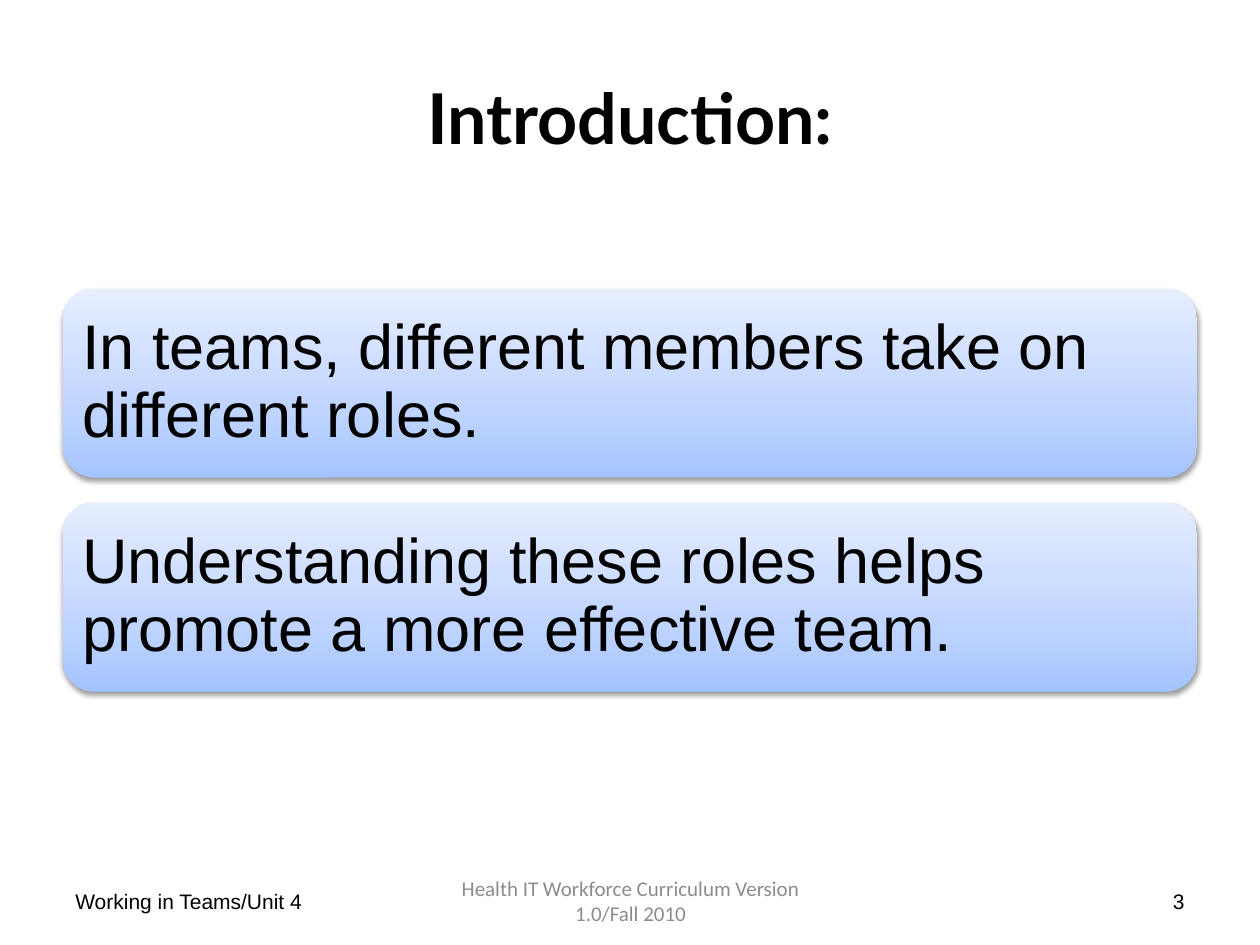
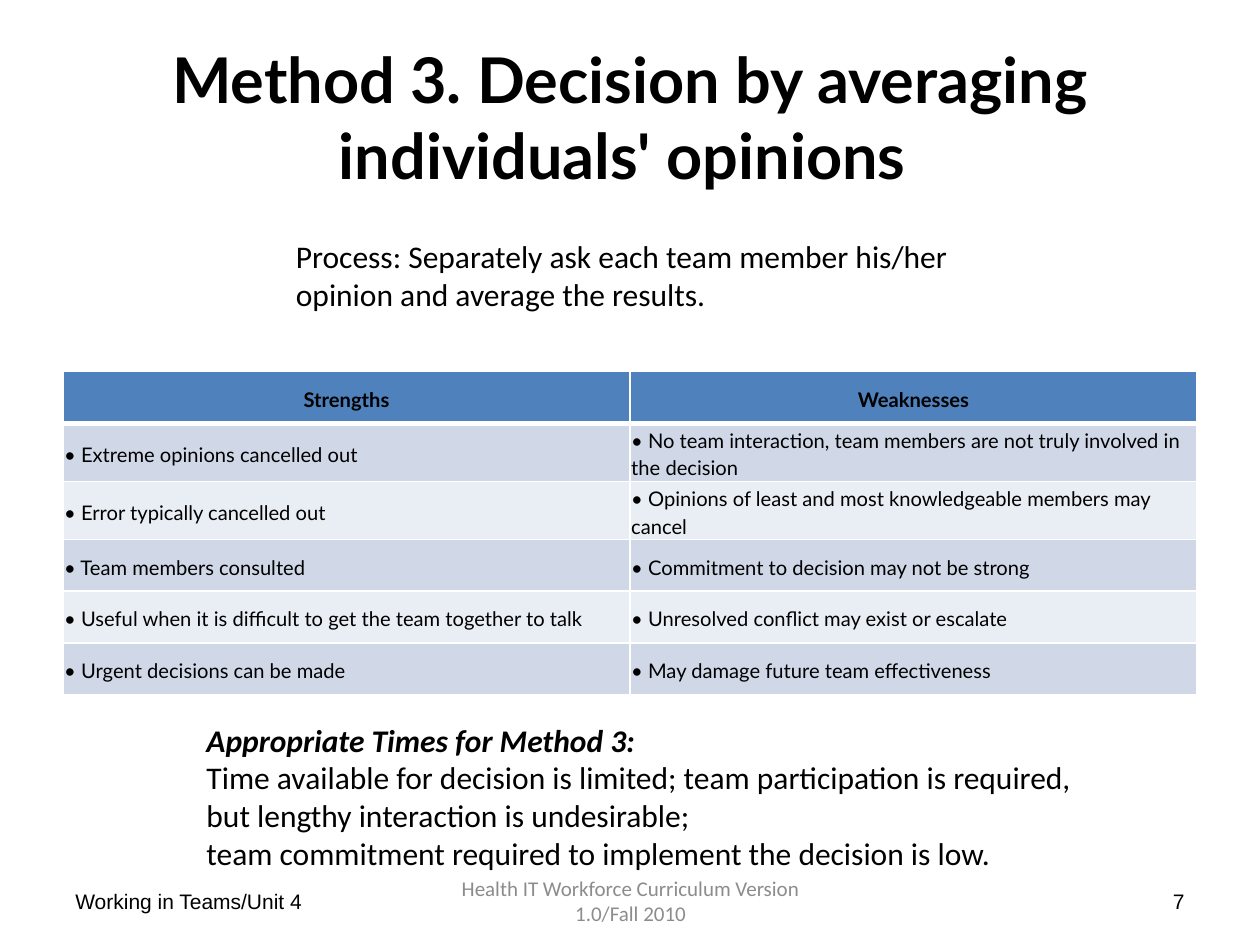
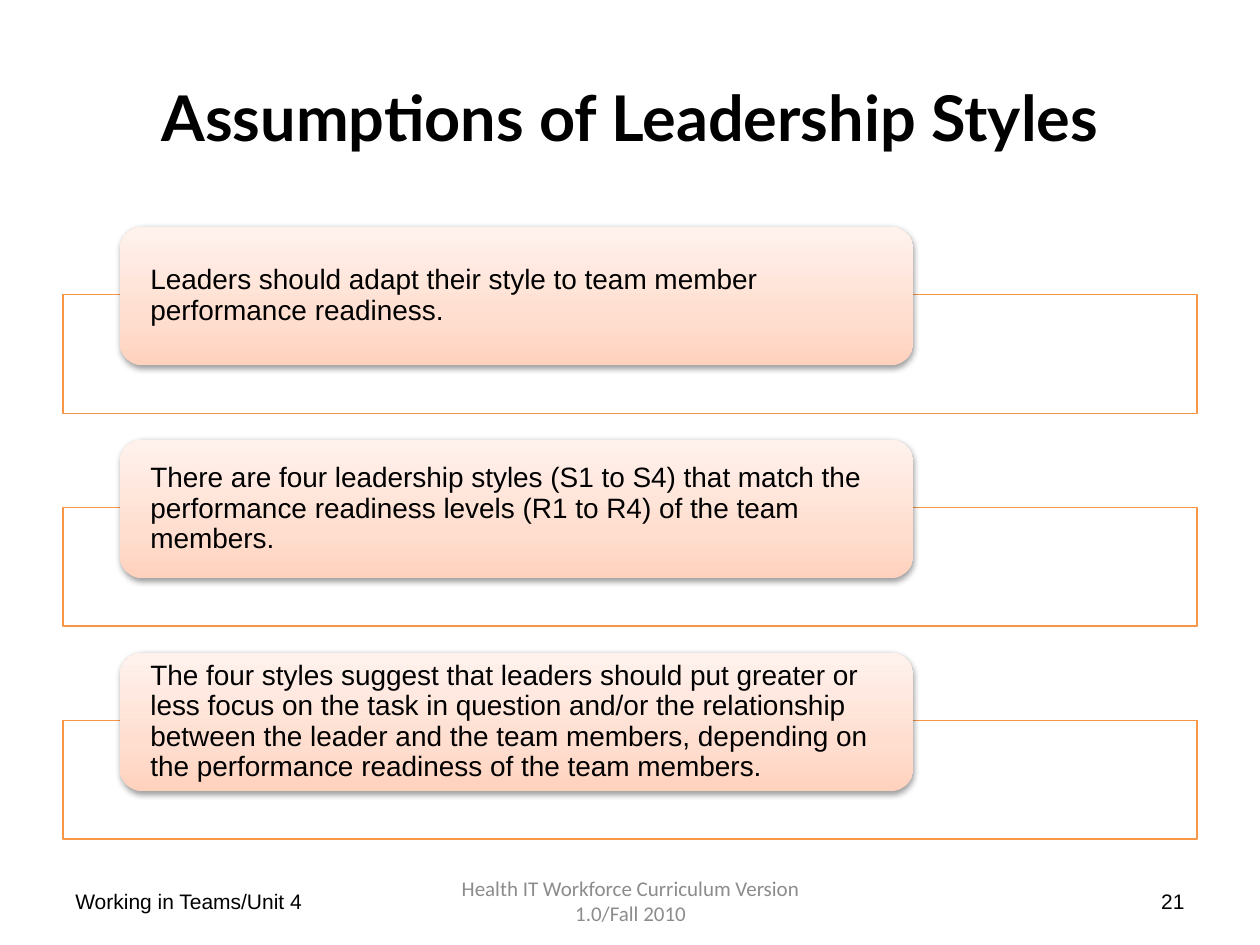
from dataclasses import dataclass

from lxml import etree
from pptx import Presentation
from pptx import util as u
from pptx.dml.color import RGBColor
from pptx.enum import shapes, text
from pptx.oxml.ns import qn

PX = 9144  # EMU per px, 100 px to the inch
LEFT, WIDTH = 50, 900  # content column shared by all slides
ALIGN, ANCHOR = text.PP_ALIGN, text.MSO_ANCHOR


@dataclass(frozen=True)
class Theme:
    # Colours
    ink: str = "000000"
    paper: str = "FFFFFF"
    muted: str = "8C8C8C"
    accent: str = "F79646"
    header: str = "4F81BD"
    bands: tuple = ("D0D8E8", "E9EDF4")
    blue: tuple = ("A4C4FF", "BFD4FF", "E6EEFF")
    orange: tuple = ("FFD2BD", "FFDED0", "FFF2ED")
    # Fonts
    heading: str = "Lato"
    body: str = "Arial"
    note: str = "Calibri"
    # Type sizes in points
    title_size: int = 36
    statement_size: int = 36
    note_size: int = 18
    card_size: int = 16
    footer_size: int = 12
    table_size: float = 11.5


def px(*lengths):
    return [u.Emu(length * PX) for length in lengths]


def add_xml(parent, tag, **attributes):
    return etree.SubElement(parent, qn(tag), {key: str(value) for key, value in attributes.items()})


class Deck:
    """Holds the theme and the current slide, and draws elements on it."""

    def __init__(self, theme):
        self.theme = theme
        self.presentation = Presentation()
        self.presentation.slide_width, self.presentation.slide_height = px(1000, 750)
        self.slide = None

    def start_slide(self, title, number, title_size=None):
        theme = self.theme
        self.slide = self.presentation.slides.add_slide(self.presentation.slide_layouts[5])
        shape = self.slide.shapes.title
        shape.left, shape.top, shape.width, shape.height = px(LEFT, 30, WIDTH, 125)
        self.set_text(shape.text_frame, [title], theme.heading, title_size or theme.title_size,
                      align=ALIGN.CENTER, anchor=ANCHOR.MIDDLE, bold=True)

        # Footer: course, slide number, curriculum
        for left, width, words, font, color, align in (
            (50, 233, "Working in Teams/Unit 4", theme.body, theme.ink, ALIGN.LEFT),
            (717, 233, str(number), theme.body, theme.ink, ALIGN.RIGHT),
            (342, 317, "Health IT Workforce Curriculum Version 1.0/Fall 2010",
             theme.note, theme.muted, ALIGN.CENTER),
        ):
            self.text_box(left, 695, width, 40, [words], font, theme.footer_size,
                          color=color, align=align, anchor=ANCHOR.MIDDLE)

    def set_text(self, frame, lines, font, size, color=None, align=ALIGN.LEFT,
                 anchor=ANCHOR.TOP, bold=False, spacing=None):
        frame.word_wrap = True
        frame.auto_size = text.MSO_AUTO_SIZE.NONE
        frame.vertical_anchor = anchor
        frame.text = "\n".join(lines)
        for paragraph in frame.paragraphs:
            paragraph.alignment = align
            paragraph.line_spacing = spacing
            paragraph.font.name = font
            paragraph.font.size = u.Pt(size)
            paragraph.font.bold = bold
            paragraph.font.color.rgb = RGBColor.from_string(color or self.theme.ink)

    def text_box(self, left, top, width, height, lines, font, size, **style):
        box = self.slide.shapes.add_textbox(*px(left, top, width, height))
        self.set_text(box.text_frame, lines, font, size, **style)
        return box.text_frame

    def card(self, left, top, width, height, words, colors, size, margin_x, margin_y):
        """Rounded card with a vertical gradient and a soft shadow."""
        shape = self.slide.shapes.add_shape(
            shapes.MSO_SHAPE.ROUNDED_RECTANGLE, *px(left, top, width, height))
        shape.line.fill.background()
        shape.fill.gradient()
        shape.fill.gradient_angle = 90
        properties = shape._element.spPr
        stops = properties.find(".//" + qn("a:gsLst"))
        stops.clear()
        for position, color in zip((0, 35000, 100000), colors):
            add_xml(add_xml(stops, "a:gs", pos=position), "a:srgbClr", val=color)

        shape.shadow.inherit = False
        shadow = add_xml(properties.find(qn("a:effectLst")), "a:outerShdw",
                         blurRad=40000, dist=20000, dir=5400000, rotWithShape=0)
        add_xml(add_xml(shadow, "a:srgbClr", val=self.theme.ink), "a:alpha", val=38000)

        frame = shape.text_frame
        frame.margin_left, frame.margin_right = px(margin_x, margin_x)
        frame.margin_top, frame.margin_bottom = px(margin_y, margin_y)
        self.set_text(frame, [words], self.theme.body, size, anchor=ANCHOR.MIDDLE, spacing=0.9)

    def outline(self, left, top, width, height):
        shape = self.slide.shapes.add_shape(
            shapes.MSO_SHAPE.RECTANGLE, *px(left, top, width, height))
        shape.shadow.inherit = False
        shape.fill.solid()
        shape.fill.fore_color.rgb = RGBColor.from_string(self.theme.paper)
        shape.line.color.rgb = RGBColor.from_string(self.theme.accent)
        shape.line.width = u.Pt(0.75)

    def table(self, left, top, width, row_height, rows):
        theme = self.theme
        table = self.slide.shapes.add_table(
            len(rows), len(rows[0]), *px(left, top, width, row_height * len(rows))).table
        for row_index, row in enumerate(rows):
            is_header = row_index == 0
            fill = theme.header if is_header else theme.bands[(row_index - 1) % 2]
            for column_index, words in enumerate(row):
                cell = table.cell(row_index, column_index)
                cell.margin_left = cell.margin_right = px(1)[0]
                cell.margin_top = cell.margin_bottom = px(1)[0]
                self.cell_text(cell, words, is_header)
                self.cell_borders(cell, 3 if is_header else 1, 3 if row_index == 1 else 1)
                cell.fill.solid()
                cell.fill.fore_color.rgb = RGBColor.from_string(fill)

    def cell_text(self, cell, words, is_header):
        cell.vertical_anchor = ANCHOR.MIDDLE
        cell.text = words
        paragraph = cell.text_frame.paragraphs[0]
        paragraph.alignment = ALIGN.CENTER if is_header else ALIGN.LEFT
        paragraph.line_spacing = 1.15
        paragraph.space_after = u.Pt(10)
        paragraph.font.name = self.theme.heading
        paragraph.font.size = u.Pt(self.theme.table_size)
        paragraph.font.bold = is_header
        paragraph.font.color.rgb = RGBColor.from_string(self.theme.ink)

    def cell_borders(self, cell, bottom, top):
        properties = cell._tc.get_or_add_tcPr()
        for side, points in (("L", 1), ("R", 1), ("T", top), ("B", bottom)):
            line = add_xml(properties, f"a:ln{side}", w=int(u.Pt(points)))
            add_xml(add_xml(line, "a:solidFill"), "a:srgbClr", val=self.theme.paper)


def introduction(deck):
    deck.start_slide("Introduction:", 3, title_size=40)
    statements = (
        "In teams, different members take on different roles.",
        "Understanding these roles helps promote a more effective team.",
    )
    for index, statement in enumerate(statements):
        deck.card(LEFT, 229 + 170 * index, WIDTH, 150, statement,
                  deck.theme.blue, deck.theme.statement_size, margin_x=8, margin_y=8)


def averaging_method(deck):
    theme = deck.theme
    # The closing space shifts the centred second line
    deck.start_slide("Method 3. Decision by averaging individuals' opinions ", 7)
    deck.table(LEFT, 295, WIDTH, 41, (
        ("Strengths", "Weaknesses"),
        ("• Extreme opinions cancelled out",
         "• No team interaction, team members are not truly involved in the decision"),
        ("• Error typically cancelled out",
         "• Opinions of least and most knowledgeable members may cancel"),
        ("• Team members consulted", "• Commitment to decision may not be strong"),
        ("• Useful when it is difficult to get the team together to talk",
         "• Unresolved conflict may exist or escalate"),
        ("• Urgent decisions can be made", "• May damage future team effectiveness"),
    ))
    deck.text_box(225, 183, 549, 71, (
        "Process: Separately ask each team member his/her",
        "opinion and average the results.",
    ), theme.note, theme.note_size)
    times = deck.text_box(154, 567, 721, 162, (
        "Appropriate Times for Method 3:",
        "Time available for decision is limited; team participation is required,",
        "but lengthy interaction is undesirable;",
        "team commitment required to implement the decision is low.",
    ), theme.note, theme.note_size)
    heading = times.paragraphs[0].font
    heading.bold = heading.italic = True


def leadership_assumptions(deck):
    deck.start_slide("Assumptions of Leadership Styles", 21)
    assumptions = (
        "Leaders should adapt their style to team member performance readiness.",
        "There are four leadership styles (S1 to S4) that match the performance "
        "readiness levels (R1 to R4) of the team members.",
        "The four styles suggest that leaders should put greater or less focus on the task "
        "in question and/or the relationship between the leader and the team members, "
        "depending on the performance readiness of the team members.",
    )
    for index, assumption in enumerate(assumptions):
        top = 180 + 169 * index
        deck.outline(LEFT, top + 54, WIDTH, 94)
        deck.card(95, top, 630, 110, assumption,
                  deck.theme.orange, deck.theme.card_size, margin_x=19, margin_y=0)


def main():
    deck = Deck(Theme())
    introduction(deck)
    averaging_method(deck)
    leadership_assumptions(deck)
    deck.presentation.save("out.pptx")


if __name__ == "__main__":
    main()
